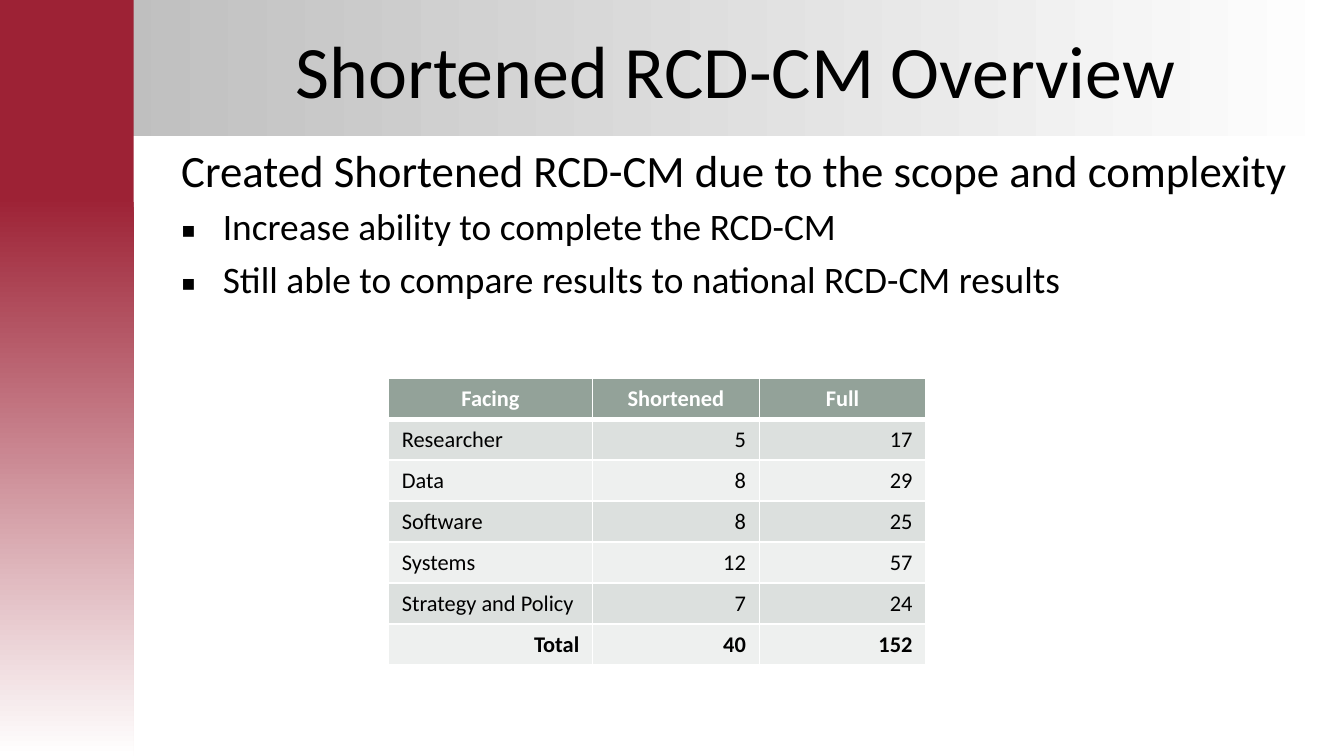
import dataclasses

import pptx
import pptx.dml.color
import pptx.enum.shapes
import pptx.enum.text
import pptx.oxml.ns
import pptx.util
from lxml import etree

EMU_PER_PX = 4572
ALIGN = pptx.enum.text.PP_ALIGN
ANCHOR = pptx.enum.text.MSO_ANCHOR


@dataclasses.dataclass(frozen=True)
class Theme:
    """Colours, fonts and type sizes of the deck."""
    font: str = "Calibri"
    bullet_font: str = "Noto Sans Symbols"
    ink: str = "000000"
    paper: str = "FFFFFF"
    crimson: str = "9D2235"
    silver: str = "BFBFBF"
    header: str = "93A299"
    bands: tuple = ("DCE0DE", "EEF0EF")
    title_size: float = 39.6
    lead_size: float = 24
    bullet_size: float = 20
    table_size: float = 12
    thin_line: float = 1
    header_line: float = 3


THEME = Theme()


def px(length):
    """Turn px into EMU."""
    return pptx.util.Emu(length * EMU_PER_PX)


def rgb(code):
    """Turn a hex code into a colour."""
    return pptx.dml.color.RGBColor.from_string(code)


def style_paragraph(para, size, color=THEME.ink, bold=False, align=ALIGN.LEFT):
    """Set alignment and font of one paragraph."""
    para.alignment = align
    para.font.name = THEME.font
    para.font.size = pptx.util.Pt(size)
    para.font.bold = bold
    para.font.color.rgb = rgb(color)


def add_text_frame(page, box, anchor):
    """Add a wrapping text box and return its frame."""
    frame = page.shapes.add_textbox(*map(px, box)).text_frame
    frame.word_wrap = True
    frame.vertical_anchor = anchor
    return frame


def add_gradient_band(page, box, color, start, angle):
    """Add a rectangle that fades from a colour to paper."""
    band = page.shapes.add_shape(
        pptx.enum.shapes.MSO_SHAPE.RECTANGLE, *map(px, box))
    band.shadow.inherit = False
    band.line.fill.background()
    band.fill.gradient()
    band.fill.gradient_angle = angle
    stops = zip(band.fill.gradient_stops, (color, THEME.paper), (start, 1))
    for stop, stop_color, position in stops:
        stop.color.rgb = rgb(stop_color)
        stop.position = position


def add_title(page, box, text):
    """Add the centred slide title."""
    para = add_text_frame(page, box, ANCHOR.MIDDLE).paragraphs[0]
    para.text = text
    style_paragraph(para, THEME.title_size, align=ALIGN.CENTER)


def add_bullet(para, indent):
    """Give a paragraph a square bullet with a hanging indent."""
    qn = pptx.oxml.ns.qn
    properties = para._p.get_or_add_pPr()
    properties.set("marL", str(px(indent)))
    properties.set("indent", str(px(-indent)))
    font = etree.SubElement(properties, qn("a:buFont"))
    font.set("typeface", THEME.bullet_font)
    etree.SubElement(properties, qn("a:buChar")).set("char", "▪")


def add_body(page, box, lead, points):
    """Add a lead line followed by bullet points."""
    frame = add_text_frame(page, box, ANCHOR.TOP)
    frame.paragraphs[0].text = lead
    style_paragraph(frame.paragraphs[0], THEME.lead_size)
    for point in points:
        para = frame.add_paragraph()
        para.text = point
        add_bullet(para, 62)
        para.space_before = pptx.util.Pt(THEME.bullet_size * 0.2)
        style_paragraph(para, THEME.bullet_size)


def add_border(cell, side, width):
    """Draw one side of a cell in the paper colour."""
    qn = pptx.oxml.ns.qn
    line = etree.SubElement(cell._tc.get_or_add_tcPr(), qn(f"a:ln{side}"))
    line.set("w", str(pptx.util.Pt(width)))
    fill = etree.SubElement(line, qn("a:solidFill"))
    etree.SubElement(fill, qn("a:srgbClr")).set("val", THEME.paper)


def add_counts_table(page, box, widths, rows):
    """Add the table with a header, banded rows and a total row."""
    table = page.shapes.add_table(len(rows), len(widths), *map(px, box)).table
    table.first_row = table.horz_banding = False
    for column, width in zip(table.columns, widths):
        column.width = px(width)
    last = len(rows) - 1
    for row, values in enumerate(rows):
        is_header = row == 0
        fill = THEME.header if is_header else THEME.bands[(row - 1) % 2]
        color = THEME.paper if is_header else THEME.ink
        top = THEME.header_line if row == 1 else THEME.thin_line
        bottom = THEME.header_line if is_header else THEME.thin_line
        sides = {"L": THEME.thin_line, "R": THEME.thin_line,
                 "T": top, "B": bottom}
        for column, value in enumerate(values):
            cell = table.cell(row, column)
            for side, line_width in sides.items():
                add_border(cell, side, line_width)
            cell.fill.solid()
            cell.fill.fore_color.rgb = rgb(fill)
            if is_header:
                align = ALIGN.CENTER
            elif column or row == last:
                align = ALIGN.RIGHT
            else:
                align = ALIGN.LEFT
            para = cell.text_frame.paragraphs[0]
            para.text = str(value)
            style_paragraph(para, THEME.table_size, color,
                            row in (0, last), align)


def add_overview_slide(deck):
    """Add the overview slide."""
    page = deck.slides.add_slide(deck.slide_layouts[6])
    add_gradient_band(page, (168, 0, 1832, 202), THEME.silver, 0, 0)
    add_gradient_band(page, (0, 0, 199, 1125), THEME.crimson, 0.26, 270)
    add_title(page, (249, 30, 1692, 144), "Shortened RCD-CM Overview")
    add_body(page, (250, 202, 1692, 512),
             "Created Shortened RCD-CM due to the scope and complexity",
             ("Increase ability to complete the RCD-CM",
              "Still able to compare results to national RCD-CM results"))
    counts = [("Researcher", 5, 17), ("Data", 8, 29), ("Software", 8, 25),
              ("Systems", 12, 57), ("Strategy and Policy", 7, 24)]
    totals = [sum(column) for column in list(zip(*counts))[1:]]
    add_counts_table(page, (578, 563, 800, 427), (304, 248, 248),
                     [("Facing", "Shortened", "Full"), *counts,
                      ("Total", *totals)])


def main():
    """Build and save the deck."""
    deck = pptx.Presentation()
    deck.slide_width, deck.slide_height = px(2000), px(1125)
    add_overview_slide(deck)
    deck.save("out.pptx")


if __name__ == "__main__":
    main()
